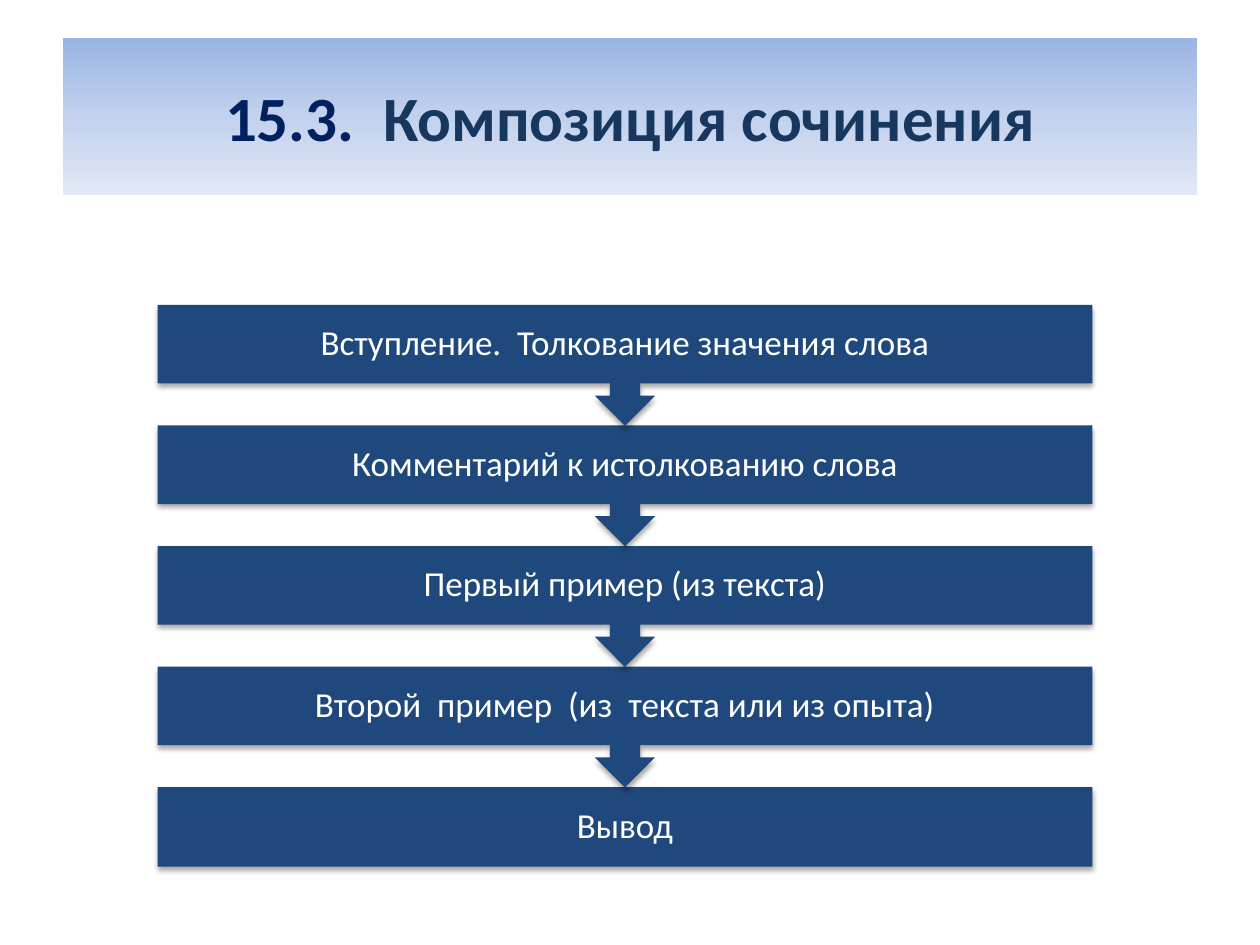
from dataclasses import dataclass

from pptx import Presentation
from pptx.dml.color import RGBColor
from pptx.enum.shapes import MSO_SHAPE
from pptx.enum.text import MSO_ANCHOR, PP_ALIGN
from pptx.oxml import parse_xml
from pptx.oxml.ns import nsdecls, qn
from pptx.util import Inches, Pt


@dataclass
class Theme:
    font: str = "Calibri"
    head: int = 36
    body: int = 20
    number: str = "002060"
    title: str = "17375E"
    box: str = "1F497D"
    text: str = "FFFFFF"
    shade: str = "000000"
    band: tuple = ((0, "9AB5E4"), (50, "C2D1ED"), (100, "E1E8F5"))


theme = Theme()


def style(run, size, color, bold=False):
    run.font.name = theme.font
    run.font.size = Pt(size)
    run.font.bold = bold
    run.font.color.rgb = RGBColor.from_string(color)


prs = Presentation()
prs.slide_width, prs.slide_height = Inches(10), Inches(7.5)
slide = prs.slides.add_slide(prs.slide_layouts[5])

# Title on a gradient band
title = slide.shapes.title
title.left, title.top = Inches(0.5), Inches(0.3)
title.width, title.height = Inches(9), Inches(1.25)
stops = "".join(
    f'<a:gs pos="{pos * 1000}"><a:srgbClr val="{color}"/></a:gs>'
    for pos, color in theme.band
)
title.element.spPr.append(parse_xml(
    f'<a:gradFill {nsdecls("a")} rotWithShape="1"><a:gsLst>{stops}</a:gsLst>'
    '<a:lin ang="5400000" scaled="0"/></a:gradFill>'
))
title.text_frame.vertical_anchor = MSO_ANCHOR.MIDDLE
para = title.text_frame.paragraphs[0]
para.alignment = PP_ALIGN.CENTER
for words, color in (("15.3.  ", theme.number), ("Композиция сочинения", theme.title)):
    run = para.add_run()
    run.text = words
    style(run, theme.head, color, True)

# Steps from top to bottom; each but the last points to the next
steps = [
    "Вступление.  Толкование значения слова",
    "Комментарий к истолкованию слова",
    "Первый пример (из текста)",
    "Второй  пример  (из  текста или из опыта)",
    "Вывод",
]
left, top, width = 1.25, 2.42, 7.42
pitch, tall, low = 0.957, 0.96, 0.63
last = len(steps) - 1

# The lowest step is drawn first so that each arrow lies over the next box
for i, words in reversed(list(enumerate(steps))):
    kind = MSO_SHAPE.RECTANGLE if i == last else MSO_SHAPE.DOWN_ARROW_CALLOUT
    step = slide.shapes.add_shape(
        kind, Inches(left), Inches(top + i * pitch),
        Inches(width), Inches(low if i == last else tall),
    )
    step.fill.solid()
    step.fill.fore_color.rgb = RGBColor.from_string(theme.box)
    step.line.fill.background()

    # Soft shadow straight below
    step.shadow.inherit = False
    step.element.spPr.find(qn("a:effectLst")).append(parse_xml(
        f'<a:outerShdw {nsdecls("a")} blurRad="{Pt(3.1)}" dist="{Pt(1.8)}" '
        f'dir="5400000" rotWithShape="0"><a:srgbClr val="{theme.shade}">'
        '<a:alpha val="35000"/></a:srgbClr></a:outerShdw>'
    ))

    # Label
    frame = step.text_frame
    frame.text = words
    frame.word_wrap = True
    frame.vertical_anchor = MSO_ANCHOR.MIDDLE
    frame.margin_left = frame.margin_right = Inches(0.16)
    frame.margin_top = frame.margin_bottom = Inches(0.16)
    para = frame.paragraphs[0]
    para.alignment = PP_ALIGN.CENTER
    para.line_spacing = 0.9
    style(para.runs[0], theme.body, theme.text)

prs.save("out.pptx")
